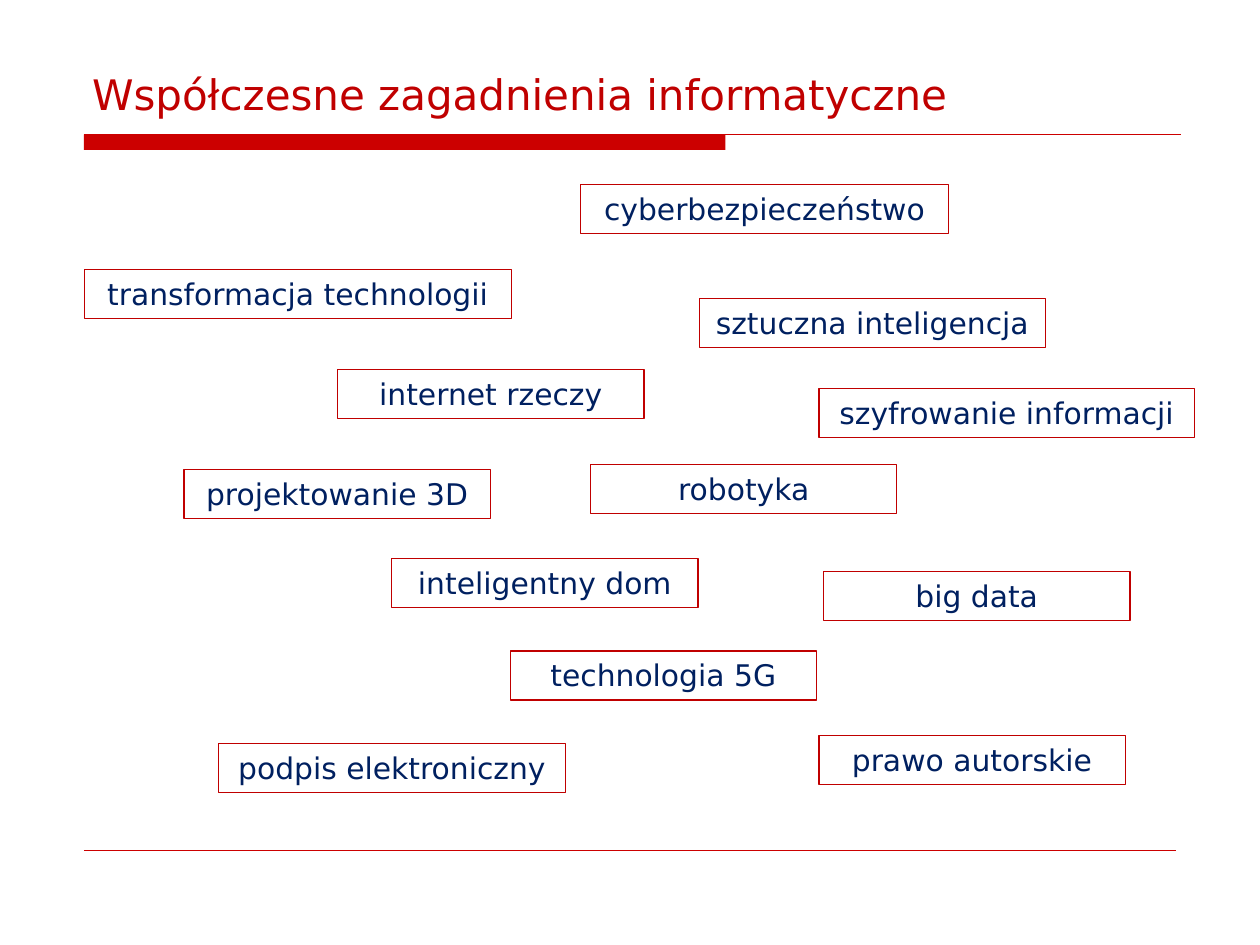
from lxml.etree import SubElement
from pptx import Presentation
from pptx.dml.color import RGBColor
from pptx.enum.shapes import MSO_CONNECTOR, MSO_SHAPE
from pptx.enum.text import MSO_ANCHOR, MSO_AUTO_SIZE, PP_ALIGN
from pptx.oxml.ns import qn
from pptx.util import Pt

# Content: topic, left, top, width (points)
TITLE = "Współczesne zagadnienia informatyczne"
STANDARD_WIDTH = 175
TOPICS = [
    ("transformacja technologii", 48.2, 154, 244),
    ("sztuczna inteligencja", 399.6, 170.5, 198),
    ("internet rzeczy", 193, 211, STANDARD_WIDTH),
    ("inteligentny dom", 223.9, 319, STANDARD_WIDTH),
    ("robotyka", 337.5, 265.5, STANDARD_WIDTH),
    ("projektowanie 3D", 105.2, 268.5, STANDARD_WIDTH),
    ("technologia 5G", 291.6, 372, STANDARD_WIDTH),
    ("big data", 470.7, 326.7, STANDARD_WIDTH),
    ("cyberbezpieczeństwo", 331.7, 105.5, 210.5),
    ("podpis elektroniczny", 124.8, 425, 198.5),
    ("szyfrowanie informacji", 468, 222, 214.7),
    ("prawo autorskie", 468, 420.5, STANDARD_WIDTH),
]

FONT = "DejaVu Sans"
BAR_RED = RGBColor(0xCC, 0x00, 0x00)
RED = RGBColor(0xC0, 0x00, 0x00)
NAVY = RGBColor(0x00, 0x20, 0x60)
MARGIN, RULE_TOP, FOOT_TOP = 48, 77, 486
BOX_HEIGHT = 28


def write(frame, text, size, color, align):
    paragraph = frame.paragraphs[0]
    paragraph.alignment = align
    run = paragraph.add_run()
    run.text = text
    run.font.name = FONT
    run.font.size = Pt(size)
    run.font.color.rgb = color


def add_rule(slide, right, top, weight):
    rule = slide.shapes.add_connector(
        MSO_CONNECTOR.STRAIGHT, Pt(MARGIN), Pt(top), Pt(right), Pt(top))
    rule.line.color.rgb = BAR_RED
    rule.line.width = Pt(weight)
    SubElement(rule._element.spPr, qn("a:effectLst"))


def add_box(slide, left, top, width, height):
    box = slide.shapes.add_shape(
        MSO_SHAPE.RECTANGLE, Pt(left), Pt(top), Pt(width), Pt(height))
    box.shadow.inherit = False
    return box


def main():
    prs = Presentation()
    prs.slide_width, prs.slide_height = Pt(720), Pt(540)
    slide = prs.slides.add_slide(prs.slide_layouts[5])

    # Title
    title = slide.shapes.title
    title.left, title.top, title.width, title.height = Pt(45.4), Pt(23.8), Pt(630), Pt(47.5)
    title.text_frame.auto_size = MSO_AUTO_SIZE.NONE
    title.text_frame.vertical_anchor = MSO_ANCHOR.BOTTOM
    write(title.text_frame, TITLE, 24, RED, PP_ALIGN.LEFT)

    # Header bar and rules
    bar = add_box(slide, MARGIN, RULE_TOP, 366.5, 8.7)
    bar.fill.solid()
    bar.fill.fore_color.rgb = BAR_RED
    bar.line.fill.background()
    add_rule(slide, 674.6, RULE_TOP, 0.75)
    add_rule(slide, 672, FOOT_TOP, 0.25)

    # Topic boxes
    for topic, left, top, width in TOPICS:
        box = add_box(slide, left, top, width, BOX_HEIGHT)
        box.fill.background()
        box.line.color.rgb = RED
        box.line.width = Pt(0.75)
        frame = box.text_frame
        frame.word_wrap = True
        frame.auto_size = MSO_AUTO_SIZE.SHAPE_TO_FIT_TEXT
        frame.vertical_anchor = MSO_ANCHOR.TOP
        write(frame, topic, 17, NAVY, PP_ALIGN.CENTER)

    prs.save("out.pptx")


if __name__ == "__main__":
    main()
